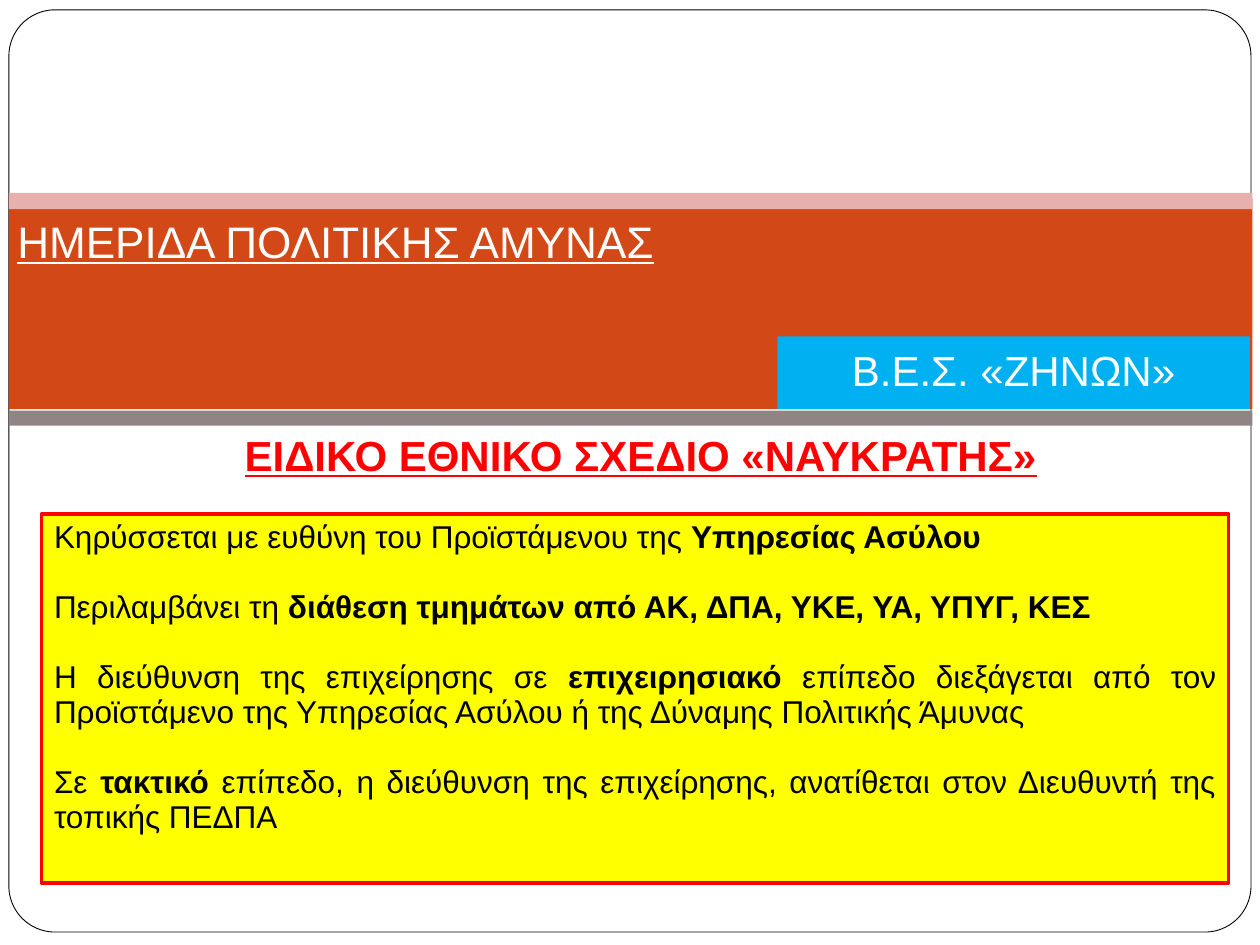
from pptx import Presentation
from pptx.dml.color import RGBColor
from pptx.enum.shapes import MSO_SHAPE as SHAPE
from pptx.enum.text import MSO_ANCHOR as ANCHOR, PP_ALIGN as ALIGN
from pptx.util import Cm, Pt

WHITE = RGBColor(0xFF, 0xFF, 0xFF)
BLACK = RGBColor(0x00, 0x00, 0x00)
RED = RGBColor(0xFF, 0x00, 0x00)
YELLOW = RGBColor(0xFF, 0xFF, 0x00)
BLUE = RGBColor(0x00, 0xB0, 0xF0)
ORANGE = RGBColor(0xD3, 0x48, 0x17)
PINK = RGBColor(0xE6, 0xB1, 0xAC)
GREY = RGBColor(0x91, 0x84, 0x85)

FONT = "Arial"
BAND_LEFT, BAND_WIDTH = 0.18, 25.07
# Each paragraph is a list of (text, bold) runs.
PLAN_POINTS = [
    [("Κηρύσσεται με ευθύνη του Προϊστάμενου της ", False),
     ("Υπηρεσίας Ασύλου", True)],
    [("Περιλαμβάνει τη ", False),
     ("διάθεση τμημάτων από ΑΚ, ΔΠΑ, ΥΚΕ, ΥΑ, ΥΠΥΓ, ΚΕΣ", True)],
    [("Η διεύθυνση της επιχείρησης σε ", False),
     ("επιχειρησιακό ", True),
     ("επίπεδο διεξάγεται από τον Προϊστάμενο της Υπηρεσίας Ασύλου "
      "ή της Δύναμης Πολιτικής Άμυνας", False)],
    [("Σε ", False),
     ("τακτικό", True),
     (" επίπεδο, η διεύθυνση της επιχείρησης, ανατίθεται στον "
      "Διευθυντή της τοπικής ΠΕΔΠΑ", False)],
]


def add_box(slide, box, fill, line=None, line_width=1, kind=SHAPE.RECTANGLE):
    """Add a filled shape; box is left, top, width, height in cm."""
    s = slide.shapes.add_shape(kind, *map(Cm, box))
    s.shadow.inherit = False
    s.fill.solid()
    s.fill.fore_color.rgb = fill
    if line is None:
        s.line.fill.background()
    else:
        s.line.color.rgb = line
        s.line.width = Pt(line_width)
    return s


def add_run(p, text, size, color, bold=False, underline=False):
    r = p.add_run()
    r.text = text
    r.font.name = FONT
    r.font.size = Pt(size)
    r.font.color.rgb = color
    r.font.bold = bold
    r.font.underline = underline


def add_heading(slide, box, text, size, color, bold=False):
    """Add a centred, underlined line of text."""
    tf = slide.shapes.add_textbox(*map(Cm, box)).text_frame
    tf.word_wrap = True
    p = tf.paragraphs[0]
    p.alignment = ALIGN.CENTER
    add_run(p, text, size, color, bold, underline=True)
    return tf


def add_frame_and_bands(slide):
    frame = add_box(slide, (0.18, 0.2, 25.04, 18.59), WHITE, BLACK, 0.5,
                    SHAPE.ROUNDED_RECTANGLE)
    frame.adjustments[0] = 0.05
    for top, height, color in ((4.01, 4.24, ORANGE),
                               (3.89, 0.33, PINK),
                               (8.28, 0.3, GREY)):
        add_box(slide, (BAND_LEFT, top, BAND_WIDTH, height), color)


def add_base_label(slide):
    tf = add_box(slide, (15.67, 6.78, 9.53, 1.47), BLUE).text_frame
    tf.vertical_anchor = ANCHOR.MIDDLE
    tf.margin_bottom = Cm(0.25)
    p = tf.paragraphs[0]
    p.alignment = ALIGN.CENTER
    add_run(p, "Β.Ε.Σ. «ΖΗΝΩΝ»", 24, WHITE)


def add_plan_panel(slide):
    tf = add_box(slide, (0.84, 10.36, 23.93, 7.44), YELLOW, RED, 2).text_frame
    tf.word_wrap = True
    tf.vertical_anchor = ANCHOR.TOP
    for i, runs in enumerate(PLAN_POINTS):
        p = tf.add_paragraph() if i else tf.paragraphs[0]
        p.alignment = ALIGN.JUSTIFY
        p.line_spacing = Pt(20)
        p.space_after = Pt(20)
        for text, bold in runs:
            add_run(p, text, 18, BLACK, bold)


def main():
    prs = Presentation()
    prs.slide_width, prs.slide_height = Cm(25.4), Cm(19.05)
    slide = prs.slides.add_slide(prs.slide_layouts[6])
    add_frame_and_bands(slide)
    title = add_heading(slide, (0, 4.32, 13.54, 1.96),
                        "ΗΜΕΡΙΔΑ ΠΟΛΙΤΙΚΗΣ ΑΜΥΝΑΣ", 25.2, WHITE)
    title.margin_top = 0
    add_heading(slide, (0.43, 8.53, 24.97, 1.27),
                "ΕΙΔΙΚΟ ΕΘΝΙΚΟ ΣΧΕΔΙΟ «ΝΑΥΚΡΑΤΗΣ»", 24, RED, bold=True)
    add_base_label(slide)
    add_plan_panel(slide)
    prs.save("out.pptx")


if __name__ == "__main__":
    main()
